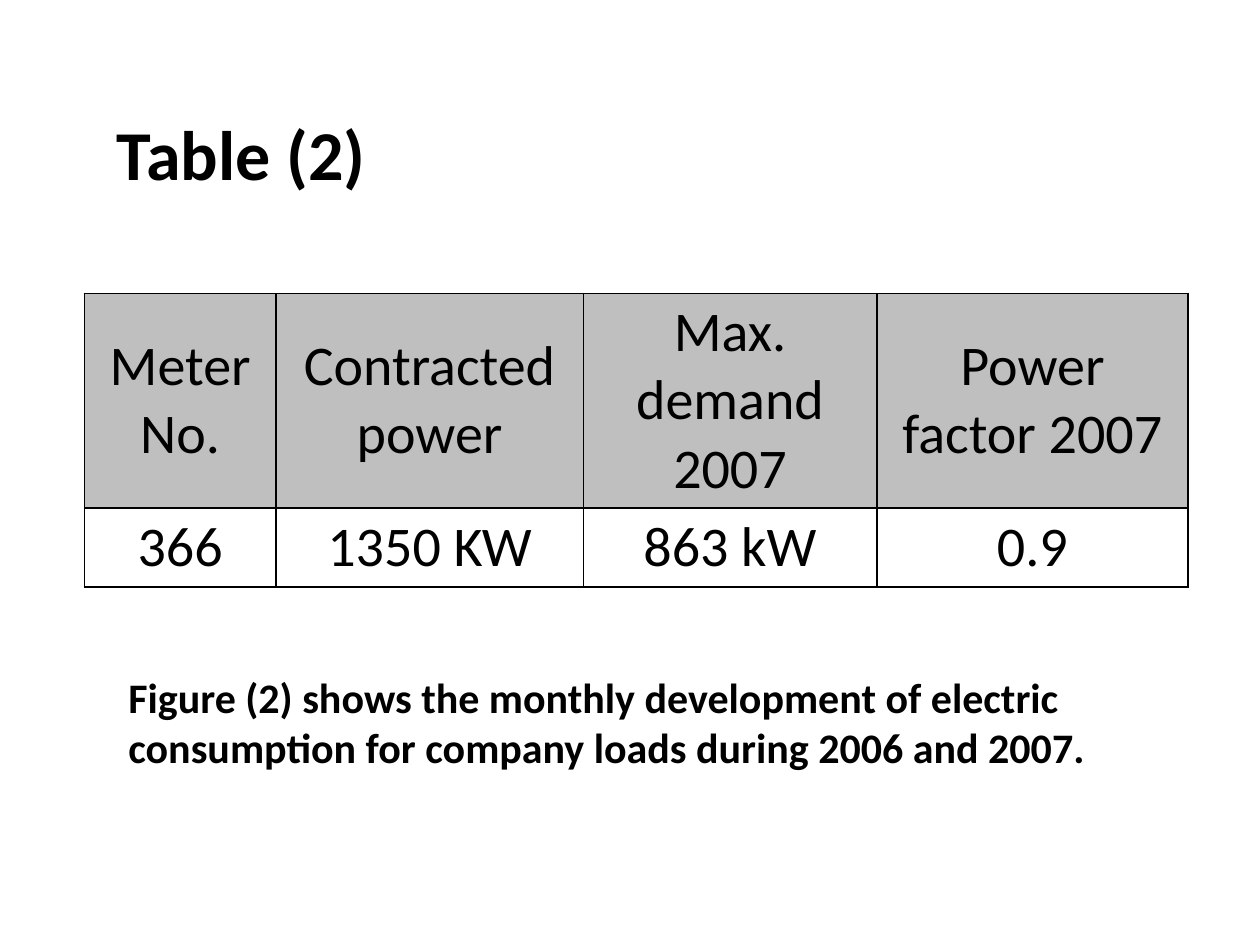
from lxml import etree
from pptx import Presentation
from pptx.dml.color import RGBColor
from pptx.enum.text import MSO_ANCHOR, PP_ALIGN
from pptx.oxml.ns import qn
from pptx.util import Inches, Pt

TOP = MSO_ANCHOR.TOP
MIDDLE = MSO_ANCHOR.MIDDLE
LEFT = PP_ALIGN.LEFT
CENTER = PP_ALIGN.CENTER
BLANK_LAYOUT = 6


def color(value):
    return RGBColor.from_string(value)


class SlideBuilder:
    font_name = "Calibri"
    text_color = "000000"
    border_color = "000000"
    border_width = Pt(1)
    header_fill = "BFBFBF"
    table_size = 32

    def __init__(self, slide):
        self.slide = slide

    def style_paragraph(self, paragraph, size, bold, alignment):
        paragraph.alignment = alignment
        font = paragraph.font
        font.name = self.font_name
        font.size = Pt(size)
        font.bold = bold
        font.color.rgb = color(self.text_color)

    def add_text(self, text, left, top, width, height, size, anchor):
        shape = self.slide.shapes.add_textbox(
            Inches(left), Inches(top), Inches(width), Inches(height))
        frame = shape.text_frame
        frame.word_wrap = True
        frame.vertical_anchor = anchor
        frame.text = text
        self.style_paragraph(frame.paragraphs[0], size, True, LEFT)

    def add_borders(self, cell):
        properties = cell._tc.get_or_add_tcPr()
        for index, side in enumerate(("a:lnL", "a:lnR", "a:lnT", "a:lnB")):
            line = etree.Element(qn(side), w=str(self.border_width))
            fill = etree.SubElement(line, qn("a:solidFill"))
            etree.SubElement(fill, qn("a:srgbClr"), val=self.border_color)
            properties.insert(index, line)

    def add_table(self, rows, left, top, widths, heights):
        table = self.slide.shapes.add_table(
            len(rows), len(widths), Inches(left), Inches(top),
            Inches(sum(widths)), Inches(sum(heights))).table
        table.first_row = False
        table.horz_banding = False
        for column, width in zip(table.columns, widths):
            column.width = Inches(width)
        for row_index, (row, height) in enumerate(zip(rows, heights)):
            table.rows[row_index].height = Inches(height)
            for column_index, text in enumerate(row):
                cell = table.cell(row_index, column_index)
                cell.text = text
                cell.vertical_anchor = MIDDLE
                cell.margin_top = cell.margin_bottom = Inches(0.03)
                self.style_paragraph(
                    cell.text_frame.paragraphs[0], self.table_size, False, CENTER)
                if row_index == 0:
                    cell.fill.solid()
                    cell.fill.fore_color.rgb = color(self.header_fill)
                else:
                    cell.fill.background()
                self.add_borders(cell)


def main():
    presentation = Presentation()
    presentation.slide_width = Inches(10)
    presentation.slide_height = Inches(7.5)
    slide = presentation.slides.add_slide(
        presentation.slide_layouts[BLANK_LAYOUT])
    builder = SlideBuilder(slide)

    builder.add_text("Table (2)", 0.83, 0.83, 5.33, 1.43, 40, TOP)
    meter_rows = [
        ["Meter No.", "Contracted power", "Max. demand 2007", "Power factor 2007"],
        ["366", "1350 KW", "863 kW", "0.9"],
    ]
    builder.add_table(
        meter_rows, 0.67, 2.33, [1.52, 2.44, 2.33, 2.47], [1.7, 0.63])
    builder.add_text(
        "Figure (2) shows the monthly development of electric consumption "
        "for company loads during 2006 and 2007.",
        0.92, 5.08, 8.08, 1.3, 24, MIDDLE)

    presentation.save("out.pptx")


if __name__ == "__main__":
    main()
